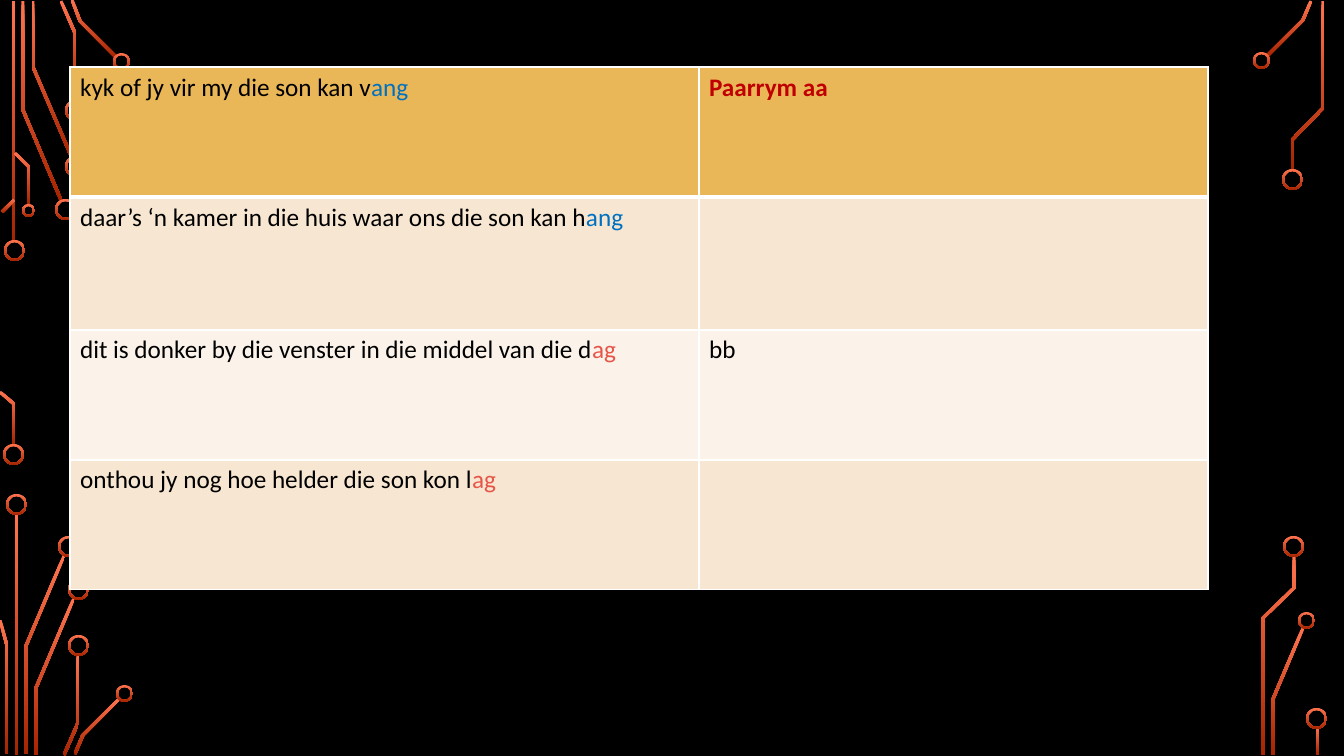
from itertools import pairwise

from lxml.etree import SubElement
from pptx import Presentation
from pptx.dml.color import RGBColor
from pptx.enum.shapes import MSO_SHAPE
from pptx.oxml.ns import qn
from pptx.util import Pt

PX = 12192000 / 1344
BLACK, BLUE, CORAL, RED = "000000", "0070C0", "E55548", "C00000"
GOLD, SAND, CREAM = "E9B758", "F7E6D1", "FBF3EA"

STRAIGHTS = [(12, 1, 241), (15, 514, 241), (1316, 727, 28)]
TRACES = [
    [(23, 1), (23, 110), (61, 200)],
    [(33, 1), (33, 67), (72, 158)],
    [(61, 1), (75, 33), (75, 101)],
    [(72, 0), (80, 21), (116, 57)],
    [(2, 212), (14, 200)],
    [(0, 392), (14, 404), (14, 445)],
    [(15, 153), (29, 167), (29, 205)],
    [(26, 754), (26, 646), (64, 556)],
    [(7, 754), (7, 646), (0, 620)],
    [(36, 755), (36, 688), (74, 598)],
    [(64, 755), (78, 723), (78, 655)],
    [(75, 754), (83, 735), (119, 699)],
    [(1267, 56), (1303, 20), (1311, 1)],
    [(1273, 755), (1273, 699), (1303, 628)],
    [(1292, 170), (1292, 140), (1323, 108), (1323, 1)],
    [(1263, 755), (1263, 618), (1294, 588), (1294, 556)],
]
RINGS = {
    21: [(4, 240), (3, 444), (55, 199), (65, 156), (65, 100), (6, 494),
         (58, 536), (68, 579), (68, 635), (1282, 169), (1283, 536), (1306, 708)],
    17: [(113, 53), (116, 685), (1253, 52), (1298, 612)],
    13: [(22, 204)],
}
POEM = [
    (GOLD, [("kyk of jy vir my die son kan v", BLACK), ("ang", BLUE)],
     [("Paarrym aa", RED)]),
    (SAND, [("daar’s ‘n kamer in die huis waar ons die son kan h", BLACK), ("ang", BLUE)],
     []),
    (CREAM, [("dit is donker by die venster in die middel van die d", BLACK), ("ag", CORAL)],
     [("bb", BLACK)]),
    (SAND, [("onthou jy nog hoe helder die son kon l", BLACK), ("ag", CORAL)],
     []),
]


def px(length):
    return round(length * PX)


def color(value):
    return RGBColor.from_string(value)


class CircuitSlide:
    """Draws copper circuit traces and a bordered table on one slide."""

    thickness = 3
    rim = 2
    copper = ("FF744E", "A62400")
    font, size = "Calibri", 18

    def __init__(self, page):
        self.page = page
        page.background.fill.solid()
        page.background.fill.fore_color.rgb = color(BLACK)

    def plate(self, shape):
        shape.shadow.inherit = False
        shape.line.fill.background()
        shape.fill.gradient()
        shape.fill.gradient_angle = 270
        for stop, value in zip(shape.fill.gradient_stops, self.copper):
            stop.color.rgb = color(value)

    def straight(self, left, top, height):
        self.plate(self.page.shapes.add_shape(
            MSO_SHAPE.RECTANGLE, px(left), px(top), px(self.thickness), px(height)))

    def ring(self, left, top, diameter):
        shape = self.page.shapes.add_shape(
            MSO_SHAPE.DONUT, px(left), px(top), px(diameter), px(diameter))
        shape.adjustments[0] = self.rim / diameter
        self.plate(shape)

    def trace(self, points):
        centres = [complex(*point) for point in points]
        normals = [(end - start) / abs(end - start) * 1j for start, end in pairwise(centres)]
        offsets = []
        for before, after in zip(normals[:1] + normals, normals + normals[-1:]):
            total = before + after
            offsets.append(total * self.thickness / abs(total) ** 2)
        one_side = [centre + offset for centre, offset in zip(centres, offsets)]
        other_side = [centre - offset for centre, offset in zip(centres, offsets)]
        outline = [(px(corner.real), px(corner.imag)) for corner in one_side + other_side[::-1]]
        builder = self.page.shapes.build_freeform(*outline[0])
        builder.add_line_segments(outline[1:], close=True)
        self.plate(builder.convert_to_shape())

    def border(self, cell, side, width):
        line = SubElement(cell._tc.get_or_add_tcPr(), qn(f"a:ln{side}"), w=str(Pt(width)))
        fill = SubElement(line, qn("a:solidFill"))
        SubElement(fill, qn("a:srgbClr"), val="FFFFFF")

    def cell(self, cell, spans, fill, top, bottom):
        for side, width in zip("LRTB", (1, 1, top, bottom)):
            self.border(cell, side, width)
        cell.fill.solid()
        cell.fill.fore_color.rgb = color(fill)
        para = cell.text_frame.paragraphs[0]
        para.font.name, para.font.size = self.font, Pt(self.size)
        for text, value in spans:
            span = para.add_run()
            span.text = text
            span.font.color.rgb = color(value)
            span.font.bold = value == RED

    def table(self, left, top, widths, heights, rows):
        table = self.page.shapes.add_table(
            len(heights), len(widths), px(left), px(top),
            px(sum(widths)), px(sum(heights))).table
        table.first_row = False
        for column, width in zip(table.columns, widths):
            column.width = px(width)
        for index, (fill, *contents) in enumerate(rows):
            table.rows[index].height = px(heights[index])
            for position, spans in enumerate(contents):
                self.cell(table.cell(index, position), spans, fill,
                          3 if index == 1 else 1, 3 if index == 0 else 1)


def main():
    deck = Presentation()
    deck.slide_width, deck.slide_height = px(1344), px(756)
    slide = CircuitSlide(deck.slides.add_slide(deck.slide_layouts[6]))
    for straight in STRAIGHTS:
        slide.straight(*straight)
    for points in TRACES:
        slide.trace(points)
    for diameter, corners in RINGS.items():
        for left, top in corners:
            slide.ring(left, top, diameter)
    slide.table(70, 67, [629, 509], [130, 133, 130, 130], POEM)
    deck.save("out.pptx")


if __name__ == "__main__":
    main()
